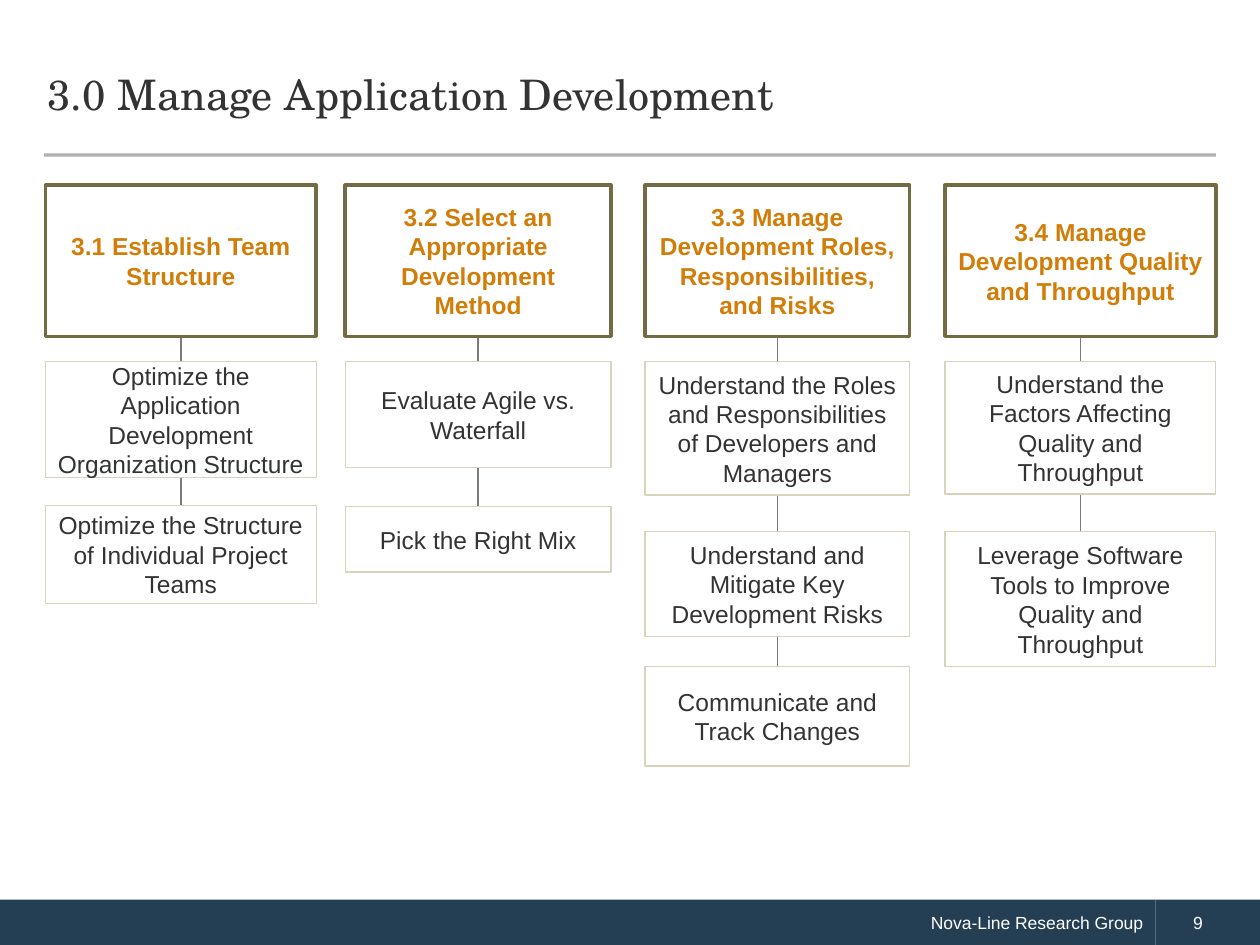
from lxml import etree
from pptx import Presentation
from pptx.dml.color import RGBColor
from pptx.enum.shapes import MSO_CONNECTOR, MSO_SHAPE
from pptx.enum.text import MSO_ANCHOR, PP_ALIGN
from pptx.oxml.ns import qn
from pptx.util import Inches, Pt

STRAIGHT, RECT = MSO_CONNECTOR.STRAIGHT, MSO_SHAPE.RECTANGLE
LEFT, CENTER, RIGHT = PP_ALIGN.LEFT, PP_ALIGN.CENTER, PP_ALIGN.RIGHT
MIDDLE = MSO_ANCHOR.MIDDLE
BOTTOM_SIDE, TOP_SIDE = 2, 0

W, H = Inches(10), Inches(7.5)
COL, ROW = W / 100, H / 75

COLORS = {
    "text": "333333", "heading": "D17D08", "heading_line": "736B41",
    "step_line": "D8D3BA", "link": "7B7B7B", "rule": "45433E",
    "footer": "243F54", "white": "FFFFFF",
}

HEADING_H, FIRST_STEP = 12, 14
COLUMN_PITCH = 23.8
COLUMNS = [
    (21.5, "3.1 Establish Team Structure", [
        (0, 9.2, "Optimize the Application Development Organization Structure"),
        (11.4, 7.8, "Optimize the Structure of Individual Project Teams")]),
    (21.1, "3.2 Select an Appropriate Development Method", [
        (0, 8.4, "Evaluate Agile vs. Waterfall"),
        (11.5, 5.2, "Pick the Right Mix")]),
    (21, "3.3 Manage Development Roles, Responsibilities, and Risks", [
        (0, 10.6, "Understand the Roles and Responsibilities of Developers and Managers"),
        (13.5, 8.3, "Understand and Mitigate Key Development Risks"),
        (24.2, 7.9, "Communicate and Track Changes")]),
    (21.5, "3.4 Manage Development Quality and Throughput", [
        (0, 10.5, "Understand the Factors Affecting Quality and Throughput"),
        (13.5, 10.7, "Leverage Software Tools to Improve Quality and Throughput")]),
]


def rgb(name):
    return RGBColor.from_string(COLORS[name])


def grid(x, y, w, h):
    return int(x * COL), int(y * ROW), int(w * COL), int(h * ROW)


def set_text(s, text, size=14, color="text", font="Arial", bold=False,
             align=CENTER, spacing=None, inset=1):
    tf = s.text_frame
    tf.word_wrap = True
    tf.vertical_anchor = MIDDLE
    tf.margin_left = int(inset * COL)
    p = tf.paragraphs[0]
    p.alignment = align
    if spacing:
        p.line_spacing = Pt(spacing)
    r = p.add_run()
    r.text = text
    r.font.size = Pt(size)
    r.font.name = font
    r.font.bold = bold
    r.font.color.rgb = rgb(color)


def add_box(sp, box, text, fill=None, line=None, width=0.75, **fmt):
    s = sp.add_shape(RECT, *grid(*box))
    s.shadow.inherit = False
    if fill:
        s.fill.solid()
        s.fill.fore_color.rgb = rgb(fill)
    else:
        s.fill.background()
    if line:
        s.line.color.rgb = rgb(line)
        s.line.width = Pt(width)
    else:
        s.line.fill.background()
    set_text(s, text, **fmt)
    return s


def add_line(sp, x1, y1, x2, y2, color, width, alpha=None):
    c = sp.add_connector(STRAIGHT, int(x1 * COL), int(y1 * ROW),
                         int(x2 * COL), int(y2 * ROW))
    c.line.color.rgb = rgb(color)
    c.line.width = Pt(width)
    sp_pr = c.line._get_or_add_ln().getparent()
    etree.SubElement(sp_pr, qn("a:effectLst"))
    if alpha:
        clr = sp_pr.find(".//" + qn("a:srgbClr"))
        etree.SubElement(clr, qn("a:alpha")).set("val", str(alpha * 1000))
    return c


def add_footer(sp, x, y, w, h):
    number_w = 8.3
    add_box(sp, (x, y, w - number_w, h), "Nova-Line Research Group",
            fill="footer", size=10, color="white", align=RIGHT)
    add_box(sp, (x + w - number_w, y, number_w, h), "9",
            fill="footer", size=10, color="white", align=LEFT, inset=3)


def add_title(sp, x, y, w, h):
    s = sp.add_textbox(*grid(x, y, w, h))
    set_text(s, "3.0 Manage Application Development", size=24,
             font="TeX Gyre Schola", align=LEFT, spacing=26)
    add_line(sp, x + 0.7, y + h, x + w - 0.6, y + h, "rule", 1.75, alpha=42)


def add_column(sp, x, y, w, heading, steps):
    mid = x + w / 2
    top = y + FIRST_STEP
    link = add_line(sp, mid, y + HEADING_H, mid, top + steps[-1][0], "link", 1)
    head = add_box(sp, (x, y, w, HEADING_H), heading, line="heading_line",
                   width=2, color="heading", bold=True)
    for offset, h, text in steps:
        last = add_box(sp, (x, top + offset, w, h), text,
                       fill="white", line="step_line")
    link.begin_connect(head, BOTTOM_SIDE)
    link.end_connect(last, TOP_SIDE)


def main():
    prs = Presentation()
    prs.slide_width, prs.slide_height = W, H
    sp = prs.slides.add_slide(prs.slide_layouts[6]).shapes
    add_footer(sp, 0, 71.4, 100, 3.6)
    add_title(sp, 2.8, 2.9, 94.3, 9.4)
    for i, (w, heading, steps) in enumerate(COLUMNS):
        add_column(sp, 3.6 + i * COLUMN_PITCH, 14.7, w, heading, steps)
    prs.save("out.pptx")


if __name__ == "__main__":
    main()
